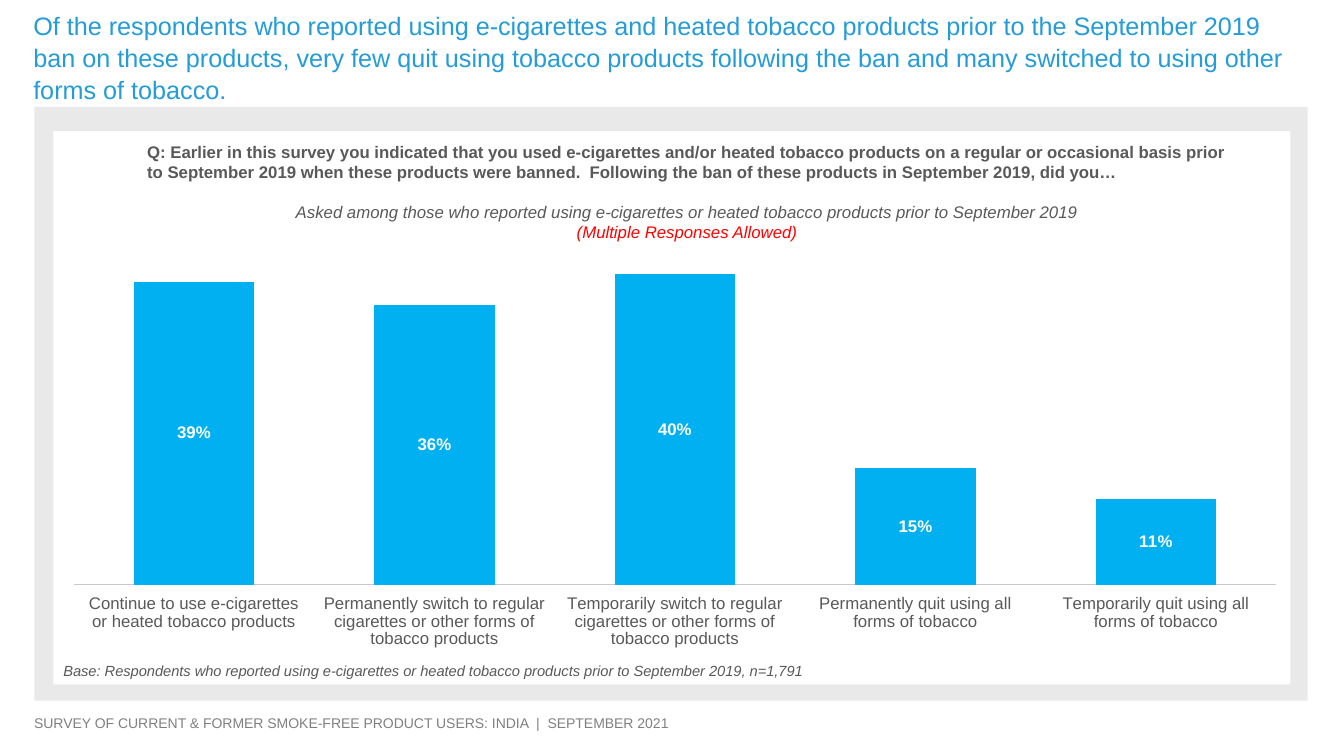
"""Build the slide on what respondents did after the September 2019 ban."""
from dataclasses import dataclass
from typing import Any

from lxml.etree import SubElement
from pptx import Presentation
from pptx.chart.data import CategoryChartData
from pptx.dml.color import RGBColor
from pptx.enum.chart import XL_CHART_TYPE, XL_LABEL_POSITION, XL_TICK_LABEL_POSITION, XL_TICK_MARK
from pptx.enum.shapes import MSO_SHAPE
from pptx.enum.text import MSO_ANCHOR, MSO_AUTO_SIZE, PP_ALIGN
from pptx.oxml.ns import qn
from pptx.util import Emu, Pt

PX = 9144
FONT = "Arial"
COLORS = {
    "frame": "E9E9E9", "panel": "FFFFFF", "footer": "808080", "text": "595959",
    "title": "249CD8", "bar": "00B0F0", "axis": "C7C8CC", "note": "FF0000", "label": "FFFFFF",
}
ANSWERS = {
    "Continue to use e-cigarettes or heated tobacco products": 0.39,
    "Permanently switch to regular cigarettes or other forms of tobacco products": 0.36,
    "Temporarily switch to regular cigarettes or other forms of tobacco products": 0.40,
    "Permanently quit using all forms of tobacco": 0.15,
    "Temporarily quit using all forms of tobacco": 0.11,
}
PLOT_LAYOUT = {"layoutTarget": "inner", "xMode": "edge", "yMode": "edge",
               "x": 0.014, "y": 0.213, "w": 0.972, "h": 0.643}


@dataclass(frozen=True)
class Box:
    """Position and size in px, 100 to the inch."""
    left: int
    top: int
    width: int
    height: int

    def emu(self) -> tuple[Emu, ...]:
        """Return left, top, width and height in EMU."""
        return tuple(Emu(length * PX) for length in (self.left, self.top, self.width, self.height))


@dataclass(frozen=True)
class Line:
    """One paragraph and its formatting."""
    text: str
    size: float
    color: str
    bold: bool = False
    italic: bool = False
    align: PP_ALIGN = PP_ALIGN.LEFT
    before: int = 0
    spacing: float = 1.0


@dataclass(frozen=True)
class Panel:
    """A plain filled rectangle."""
    box: Box
    color: str


@dataclass(frozen=True)
class Caption:
    """A text box with its paragraphs."""
    box: Box
    lines: tuple[Line, ...]


PANELS = (Panel(Box(34, 106, 1263, 589), "frame"), Panel(Box(53, 130, 1227, 549), "panel"))
CHART_BOX = Box(56, 170, 1227, 479)
TITLE = Caption(Box(23, 4, 1277, 101), (Line(
    "Of the respondents who reported using e-cigarettes and heated tobacco products prior to the "
    "September 2019 ban on these products, very few quit using tobacco products following the ban "
    "and many switched to using other forms of tobacco.", 18, "title", spacing=1.05),))
CAPTIONS = (
    Caption(Box(24, 704, 1243, 27), (Line(
        "SURVEY OF CURRENT & FORMER SMOKE-FREE PRODUCT USERS: INDIA  |  SEPTEMBER 2021",
        10, "footer"),)),
    Caption(Box(136, 136, 1091, 131), (
        Line("Q: Earlier in this survey you indicated that you used e-cigarettes and/or heated tobacco "
             "products on a regular or occasional basis prior to September 2019 when these products "
             "were banned.  Following the ban of these products in September 2019, did you…",
             12, "text", bold=True),
        Line("Asked among those who reported using e-cigarettes or heated tobacco products prior to "
             "September 2019", 12, "text", italic=True, align=PP_ALIGN.CENTER, before=14),
        Line("(Multiple Responses Allowed)", 12, "note", italic=True, align=PP_ALIGN.CENTER))),
    Caption(Box(53, 652, 832, 29), (Line(
        "Base: Respondents who reported using e-cigarettes or heated tobacco products prior to "
        "September 2019, n=1,791", 10.5, "text", italic=True),)),
)


def rgb(name: str) -> RGBColor:
    """Look up a named colour."""
    return RGBColor.from_string(COLORS[name])


def apply(target: Any, values: dict[str, Any]) -> None:
    """Set each attribute of the target."""
    for name, value in values.items():
        setattr(target, name, value)


def format_font(font: Any, size: float, color: str, bold: bool = False, italic: bool = False) -> None:
    """Set face, size, style and colour."""
    apply(font, {"name": FONT, "size": Pt(size), "bold": bold, "italic": italic})
    font.color.rgb = rgb(color)


def write_lines(shape: Any, lines: tuple[Line, ...]) -> None:
    """Fill a shape's text frame with paragraphs."""
    frame = shape.text_frame
    apply(frame, {"word_wrap": True, "auto_size": MSO_AUTO_SIZE.NONE,
                  "vertical_anchor": MSO_ANCHOR.TOP})
    for index, line in enumerate(lines):
        paragraph = frame.add_paragraph() if index else frame.paragraphs[0]
        apply(paragraph, {"alignment": line.align, "space_before": Pt(line.before),
                          "line_spacing": line.spacing})
        run = paragraph.add_run()
        run.text = line.text
        format_font(run.font, line.size, line.color, line.bold, line.italic)


def add_panel(slide: Any, panel: Panel) -> None:
    """Draw a filled rectangle without outline."""
    shape = slide.shapes.add_shape(MSO_SHAPE.RECTANGLE, *panel.box.emu())
    shape.shadow.inherit = False
    shape.fill.solid()
    shape.fill.fore_color.rgb = rgb(panel.color)
    shape.line.fill.background()


def add_answer_chart(slide: Any) -> None:
    """Add the column chart of answers."""
    data = CategoryChartData(number_format="0%")
    data.categories = list(ANSWERS)
    data.add_series("Series 1", list(ANSWERS.values()))
    chart = slide.shapes.add_chart(XL_CHART_TYPE.COLUMN_STACKED, *CHART_BOX.emu(), data).chart
    apply(chart, {"has_legend": False, "has_title": False})
    format_font(chart.font, 18, "text")

    apply(chart.value_axis, {"visible": False, "has_major_gridlines": False,
                             "minimum_scale": 0, "maximum_scale": 0.4})
    axis = chart.category_axis
    apply(axis, {"major_tick_mark": XL_TICK_MARK.NONE, "minor_tick_mark": XL_TICK_MARK.NONE,
                 "tick_label_position": XL_TICK_LABEL_POSITION.LOW})
    format_font(axis.tick_labels.font, 12, "text")
    axis.format.line.color.rgb = rgb("axis")
    axis.format.line.width = Pt(0.75)

    plot = chart.plots[0]
    apply(plot, {"gap_width": 100, "overlap": 100, "vary_by_categories": False,
                 "has_data_labels": True})
    fill = plot.series[0].format.fill
    fill.solid()
    fill.fore_color.rgb = rgb("bar")
    labels = plot.data_labels
    apply(labels, {"show_value": True, "number_format": "0%", "number_format_is_linked": False,
                   "position": XL_LABEL_POSITION.CENTER})
    format_font(labels.font, 12, "label", bold=True)

    plot_area = chart.element.find(".//" + qn("c:plotArea"))
    for old_layout in plot_area.findall(qn("c:layout")):
        plot_area.remove(old_layout)
    layout = SubElement(plot_area, qn("c:layout"))
    plot_area.insert(0, layout)
    manual = SubElement(layout, qn("c:manualLayout"))
    for name, value in PLOT_LAYOUT.items():
        SubElement(manual, qn(f"c:{name}")).set("val", str(value))


def main() -> None:
    """Build and save the presentation."""
    presentation = Presentation()
    apply(presentation, {"slide_width": Emu(1333 * PX), "slide_height": Emu(750 * PX)})
    slide = presentation.slides.add_slide(presentation.slide_layouts[5])
    title = slide.shapes.title
    apply(title, dict(zip(("left", "top", "width", "height"), TITLE.box.emu())))
    write_lines(title, TITLE.lines)
    for panel in PANELS:
        add_panel(slide, panel)
    add_answer_chart(slide)
    for caption in CAPTIONS:
        write_lines(slide.shapes.add_textbox(*caption.box.emu()), caption.lines)
    presentation.save("out.pptx")


if __name__ == "__main__":
    main()
